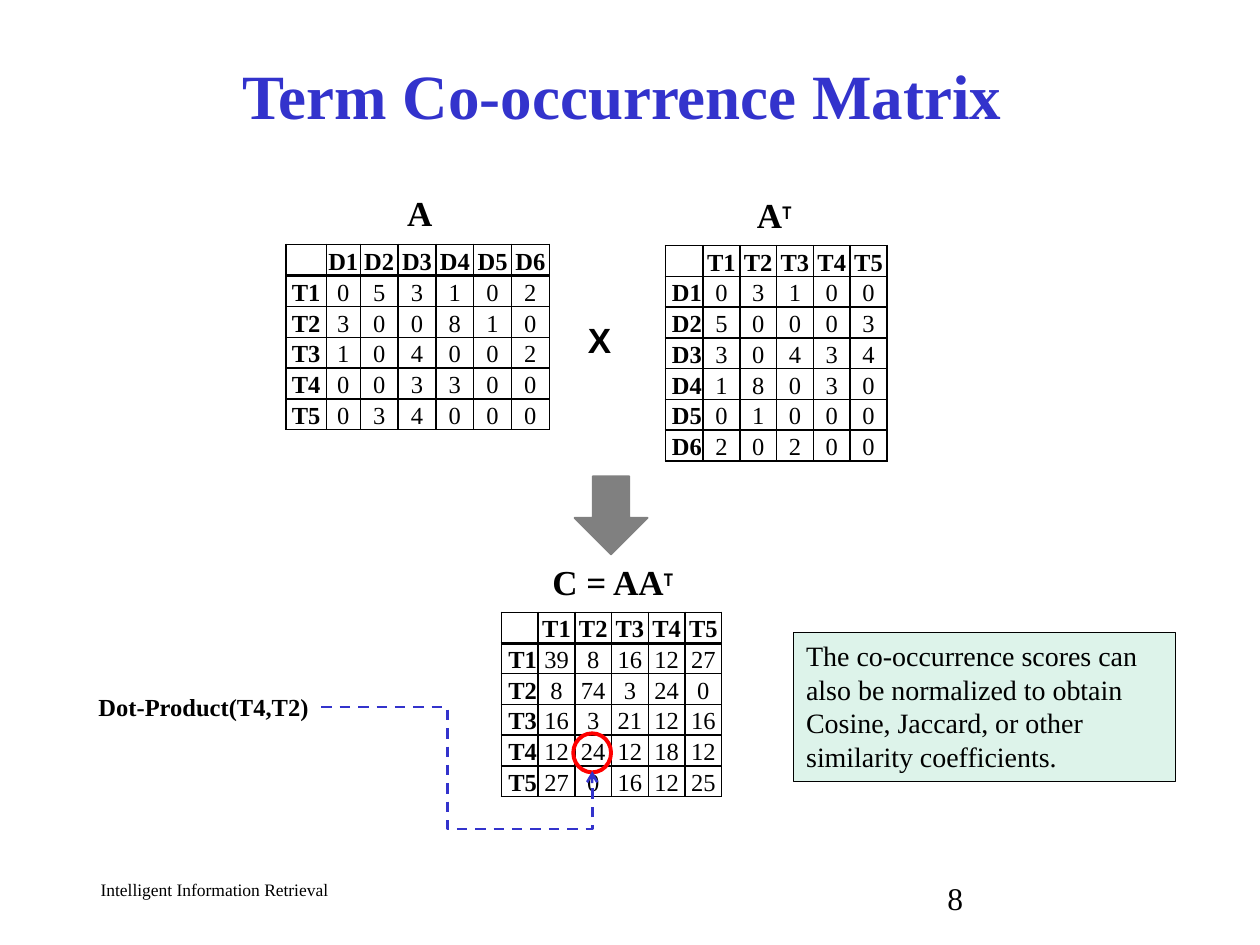
import lxml.etree
import pptx
import pptx.dml.color
import pptx.enum.dml
import pptx.enum.shapes
import pptx.enum.text
import pptx.oxml.ns
import pptx.util

Inches = pptx.util.Inches
Pt = pptx.util.Pt
qn = pptx.oxml.ns.qn
ALIGN = pptx.enum.text.PP_ALIGN
ANCHOR = pptx.enum.text.MSO_ANCHOR
SHAPE = pptx.enum.shapes.MSO_SHAPE
SERIF = "Times New Roman"
COLORS = {"ink": "000000", "blue": "3333CC", "gray": "808080", "red": "FF0000", "mint": "DDF3EA"}
SCORES = [
    [0, 5, 3, 1, 0, 2],
    [3, 0, 0, 8, 1, 0],
    [1, 0, 4, 0, 0, 2],
    [0, 0, 3, 3, 0, 0],
    [0, 3, 4, 0, 0, 0],
]
TERMS = [f"T{n + 1}" for n in range(5)]
DOCS = [f"D{n + 1}" for n in range(6)]


def color(name):
    return pptx.dml.color.RGBColor.from_string(COLORS[name])


def write(frame, text, size=14, font=SERIF, ink="ink", bold=False, align=ALIGN.LEFT, power=""):
    para = frame.paragraphs[0]
    para.alignment = align
    for part, face, points in ((text, font, size), (power, "Arial Narrow", 18)):
        if part:
            run = para.add_run()
            run.text = part
            run.font.name = face
            run.font.size = Pt(points)
            run.font.bold = bold
            run.font.color.rgb = color(ink)
    if power:
        run._r.get_or_add_rPr().set("baseline", "30000")


def label(slide, box, text, wrap=False, **style):
    frame = slide.shapes.add_textbox(*map(Inches, box)).text_frame
    frame.word_wrap = wrap
    if not wrap:
        frame.auto_size = pptx.enum.text.MSO_AUTO_SIZE.SHAPE_TO_FIT_TEXT
    write(frame, text, **style)


def tag(slide, box, text, **style):
    label(slide, box, text, **{"size": 20, "bold": True, "align": ALIGN.RIGHT, **style})


def border(cell, top, bottom):
    props = cell._tc.get_or_add_tcPr()
    for side, width in (("L", 1), ("R", 1), ("T", top), ("B", bottom)):
        line = lxml.etree.SubElement(props, qn(f"a:ln{side}"), w=str(Pt(width)))
        fill = lxml.etree.SubElement(line, qn("a:solidFill"))
        lxml.etree.SubElement(fill, qn("a:srgbClr"), val=COLORS["ink"])


def matrix(slide, box, heads, sides, values, widths, heights, rule=2, align=ALIGN.RIGHT):
    rows = [[""] + heads] + [[side] + line for side, line in zip(sides, values)]
    table = slide.shapes.add_table(len(rows), len(widths), *map(Inches, box)).table
    table.first_row = table.horz_banding = False
    for col, width in zip(table.columns, widths):
        col.width = Inches(width)
    for row, height in zip(table.rows, heights):
        row.height = Inches(height)
    for r, line in enumerate(rows):
        for c, value in enumerate(line):
            cell = table.cell(r, c)
            cell.margin_left = cell.margin_right = cell.margin_top = Inches(0.01)
            cell.margin_bottom = 0
            cell.vertical_anchor = ANCHOR.BOTTOM
            border(cell, rule if r == 1 else 1, rule if r == 0 else 1)
            cell.fill.background()
            if value == "":
                lxml.etree.SubElement(cell.text_frame.paragraphs[0]._p, qn("a:endParaRPr"), sz="1400")
            else:
                write(cell.text_frame, str(value), bold=r == 0 or c == 0,
                      align=align if c == 0 else ALIGN.CENTER)


def figure(slide, kind, box, fill=None, line="ink", width=1):
    shape = slide.shapes.add_shape(kind, *map(Inches, box))
    shape.shadow.inherit = False
    if fill:
        shape.fill.solid()
        shape.fill.fore_color.rgb = color(fill)
    else:
        shape.fill.background()
    shape.line.color.rgb = color(line)
    shape.line.width = Pt(width)
    return shape


def heading(slide, box):
    title = slide.shapes.title
    title.left, title.top, title.width, title.height = map(Inches, box)
    title.text_frame.vertical_anchor = ANCHOR.MIDDLE
    write(title.text_frame, "Term Co-occurrence Matrix ", size=36, ink="blue", bold=True, align=ALIGN.CENTER)


def factors(slide, box):
    x, y, w, h = box
    tag(slide, (x + 0.85, y, 0.41, 0.44), "A")
    matrix(slide, (x, y + 0.47, 2.09, 1.38), DOCS, TERMS, SCORES,
           [0.32, 0.27] + [0.3] * 5, [0.25] + [0.226] * 5, align=ALIGN.CENTER)
    tag(slide, (x + 2.29, y + 1.01, 0.39, 0.44), "X", font="Arial")
    tag(slide, (x + 3.62, y + 0.02, 0.49, 0.44), "A", power="T")
    flipped = [list(line) for line in zip(*SCORES)]
    matrix(slide, (x + 3.01, y + 0.48, w - 3.01, h - 0.48), TERMS, DOCS, flipped,
           [0.3] + [0.292] * 5, [(h - 0.48) / 7] * 7, rule=1)


def product(slide, box):
    x, y, w, h = box
    figure(slide, SHAPE.DOWN_ARROW, (x + 0.58, y - 0.62, 0.58, 0.62), fill="gray", line="gray")
    tag(slide, (x + 0.28, y, 1.18, 0.44), "C = AA", power="T")
    dots = [[sum(a * b for a, b in zip(one, two)) for two in SCORES] for one in SCORES]
    matrix(slide, (x, y + 0.46, w, h - 0.46), TERMS, TERMS, dots, [w / 6] * 6, [(h - 0.46) / 6] * 6)
    figure(slide, SHAPE.OVAL, (x + 0.57, y + 1.42, 0.3, 0.31), line="red", width=2.25)


def pointer(slide, box):
    x, y, w, h = box
    tag(slide, (x, y, 1.88, 0.34), "Dot-Product(T4,T2)", size=14)
    ends = (x + 1.88, y + 0.17, x + w, y + h)
    link = slide.shapes.add_connector(pptx.enum.shapes.MSO_CONNECTOR.ELBOW, *map(Inches, ends))
    link.line.color.rgb = color("blue")
    link.line.width = Pt(1.5)
    link.line.dash_style = pptx.enum.dml.MSO_LINE.DASH
    props = link._element.spPr
    shape = props.find(qn("a:prstGeom"))
    shape.set("prst", "bentConnector4")
    guides = shape.find(qn("a:avLst"))
    if guides is None:
        guides = lxml.etree.SubElement(shape, qn("a:avLst"))
    for name, value in (("adj1", 46500), ("adj2", 190200)):
        lxml.etree.SubElement(guides, qn("a:gd"), name=name, fmla=f"val {value}")
    lxml.etree.SubElement(props.find(qn("a:ln")), qn("a:tailEnd"), type="arrow")
    lxml.etree.SubElement(props, qn("a:effectLst"))


def remark(slide, box):
    frame = figure(slide, SHAPE.RECTANGLE, box, fill="mint", width=0.75).text_frame
    frame.word_wrap = True
    frame.vertical_anchor = ANCHOR.TOP
    write(frame, "The co-occurrence scores can also be normalized to obtain Cosine, "
          "Jaccard, or other similarity coefficients.", size=16)


def footer(slide, box):
    x, y, w, h = box
    label(slide, (x, y, 3.75, h), "Intelligent Information Retrieval", wrap=True, size=10)
    label(slide, (x + w - 2.08, y, 2.08, h), "8", wrap=True, size=18)


def main():
    deck = pptx.Presentation()
    deck.slide_width, deck.slide_height = Inches(10), Inches(7.5)
    slide = deck.slides.add_slide(deck.slide_layouts[5])
    heading(slide, (0.75, 0.33, 8.5, 0.83))
    factors(slide, (2.27, 1.47, 4.77, 2.19))
    product(slide, (3.98, 4.4, 1.75, 1.92))
    pointer(slide, (0.67, 5.44, 4.03, 0.68))
    remark(slide, (6.3, 5.02, 3.03, 1.18))
    footer(slide, (0.7, 6.93, 8.8, 0.25))
    deck.save("out.pptx")


if __name__ == "__main__":
    main()
